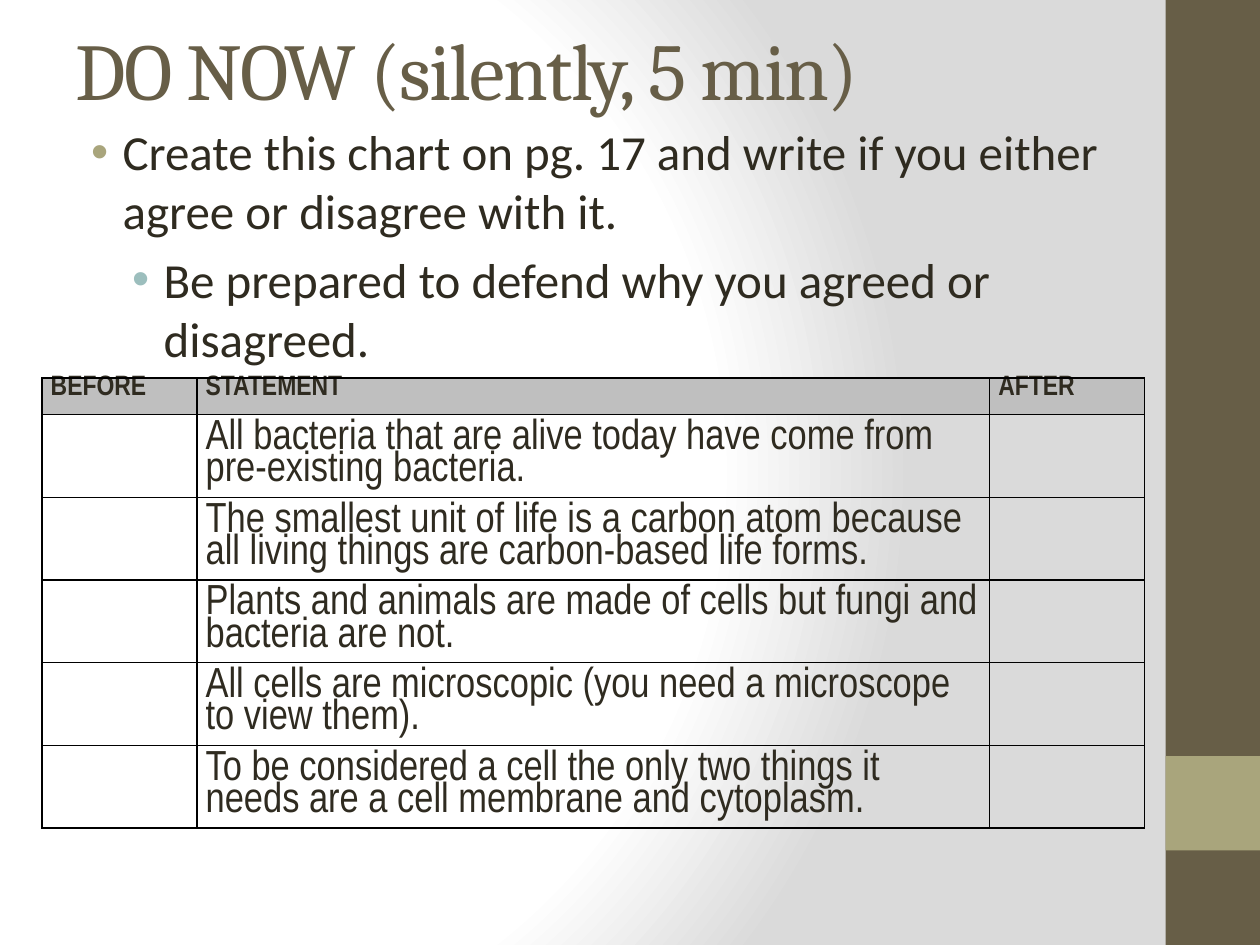
"""Build a warm-up slide with instructions and an agree-or-disagree table."""
from pptx import Presentation
from pptx.dml.color import RGBColor
from pptx.enum.shapes import MSO_SHAPE
from pptx.enum.text import MSO_ANCHOR, MSO_AUTO_SIZE, PP_ALIGN
from pptx.oxml import parse_xml
from pptx.util import Pt

COLORS = {
    "brown": "675E47", "olive": "A9A57C", "teal": "9CBEBD", "ink": "2F2B20",
    "header": "BFBFBF", "border": "000000", "white": "FFFFFF", "grey": "DADADA",
}
TITLE = "DO NOW (silently, 5 min)"
INSTRUCTIONS = [
    ("Create this chart on pg. 17 and write if you either agree or disagree with it.", 27, "olive"),
    ("Be prepared to defend why you agreed or disagreed.", 50.4, "teal"),
]
HEADERS = ["BEFORE", "STATEMENT", "AFTER"]
STATEMENTS = [
    "All bacteria that are alive today have come from pre-existing bacteria.",
    "The smallest unit of life is a carbon atom because all living things are carbon-based life forms.",
    "Plants and animals are made of cells but fungi and bacteria are not.",
    "All cells are microscopic (you need a microscope to view them).",
    "To be considered a cell the only two things it needs are a cell membrane and cytoplasm.",
]
SIDEBAR = [(0, 540, "brown"), (432, 54, "olive")]
COLUMN_WIDTHS = [88.5, 453, 88.5]
HEADER_HEIGHT, ROW_HEIGHT = 20.9, 45
NAMESPACE = 'xmlns:a="http://schemas.openxmlformats.org/drawingml/2006/main"'


def color(name):
    return RGBColor.from_string(COLORS[name])


def set_font(paragraph, name, size, tint, bold=False):
    font = paragraph.font
    font.name, font.size, font.bold = name, Pt(size), bold
    font.color.rgb = color(tint)


def add_background(slide):
    stops = "".join(
        f'<a:gs pos="{position * 1000}"><a:srgbClr val="{COLORS[tint]}"/></a:gs>'
        for position, tint in [(0, "white"), (75, "white"), (100, "grey")]
    )
    background = parse_xml(
        f'<p:bg xmlns:p="http://schemas.openxmlformats.org/presentationml/2006/main" {NAMESPACE}>'
        f'<p:bgPr><a:gradFill rotWithShape="1"><a:gsLst>{stops}</a:gsLst><a:path path="circle">'
        '<a:fillToRect l="20000" t="50000" r="100000" b="50000"/></a:path></a:gradFill>'
        "<a:effectLst/></p:bgPr></p:bg>"
    )
    slide.element.cSld.insert(0, background)


def add_sidebar(slide):
    for top, height, tint in SIDEBAR:
        bar = slide.shapes.add_shape(MSO_SHAPE.RECTANGLE, Pt(666), Pt(top), Pt(54), Pt(height))
        bar.shadow.inherit = False
        bar.fill.solid()
        bar.fill.fore_color.rgb = color(tint)
        bar.line.fill.background()


def add_title(slide):
    title = slide.shapes.title
    title.left, title.top, title.width, title.height = Pt(36), Pt(-5.76), Pt(600), Pt(90)
    frame = title.text_frame
    frame.text = TITLE
    frame.vertical_anchor = MSO_ANCHOR.MIDDLE
    frame.auto_size = MSO_AUTO_SIZE.NONE
    paragraph = frame.paragraphs[0]
    paragraph.alignment = PP_ALIGN.LEFT
    set_font(paragraph, "Cambria", 46, "brown")
    paragraph.runs[0].font._element.set("spc", "-100")


def add_instructions(slide):
    frame = slide.shapes.add_textbox(Pt(36), Pt(66), Pt(600), Pt(408)).text_frame
    frame.word_wrap = True
    for level, (text, indent, bullet) in enumerate(INSTRUCTIONS):
        paragraph = frame.add_paragraph() if level else frame.paragraphs[0]
        paragraph.text, paragraph.level = text, level
        paragraph.space_before = Pt(5.6)
        set_font(paragraph, "Calibri", 28, "ink")
        properties = paragraph._p.get_or_add_pPr()
        properties.set("marL", str(Pt(indent)))
        properties.set("indent", str(Pt(-18)))
        marks = [
            f'<a:buClr {NAMESPACE}><a:srgbClr val="{COLORS[bullet]}"/></a:buClr>',
            f'<a:buFont {NAMESPACE} typeface="Arial"/>',
            f'<a:buChar {NAMESPACE} char="•"/>',
        ]
        for mark in marks:
            properties.find("{*}defRPr").addprevious(parse_xml(mark))


def style_cell(cell, header):
    cell.margin_left = cell.margin_right = Pt(5)
    cell.margin_top = cell.margin_bottom = 0
    cell.vertical_anchor = MSO_ANCHOR.TOP if header else MSO_ANCHOR.MIDDLE
    properties = cell._tc.get_or_add_tcPr()
    for side in ("lnL", "lnR", "lnT", "lnB"):
        properties.append(parse_xml(
            f'<a:{side} {NAMESPACE} w="{Pt(1)}"><a:solidFill>'
            f'<a:srgbClr val="{COLORS["border"]}"/></a:solidFill></a:{side}>'
        ))
    if header:
        cell.fill.solid()
        cell.fill.fore_color.rgb = color("header")
    else:
        cell.fill.background()
    paragraph = cell.text_frame.paragraphs[0]
    paragraph.line_spacing = 0.82
    set_font(paragraph, "Arial Narrow", 16 if header else 24, "ink", header)


def add_statement_table(slide):
    rows = [HEADERS] + [["", statement, ""] for statement in STATEMENTS]
    heights = [HEADER_HEIGHT] + [ROW_HEIGHT] * len(STATEMENTS)
    table = slide.shapes.add_table(
        len(rows), len(HEADERS), Pt(24), Pt(216), Pt(sum(COLUMN_WIDTHS)), Pt(sum(heights))
    ).table
    table.horz_banding = False
    for column, width in zip(table.columns, COLUMN_WIDTHS):
        column.width = Pt(width)
    for index, (texts, height) in enumerate(zip(rows, heights)):
        table.rows[index].height = Pt(height)
        for cell, text in zip(table.rows[index].cells, texts):
            cell.text = text
            style_cell(cell, index == 0)


def main():
    deck = Presentation()
    deck.slide_width, deck.slide_height = Pt(720), Pt(540)
    slide = deck.slides.add_slide(deck.slide_layouts[5])
    add_background(slide)
    add_sidebar(slide)
    add_title(slide)
    add_instructions(slide)
    add_statement_table(slide)
    deck.save("out.pptx")


if __name__ == "__main__":
    main()
